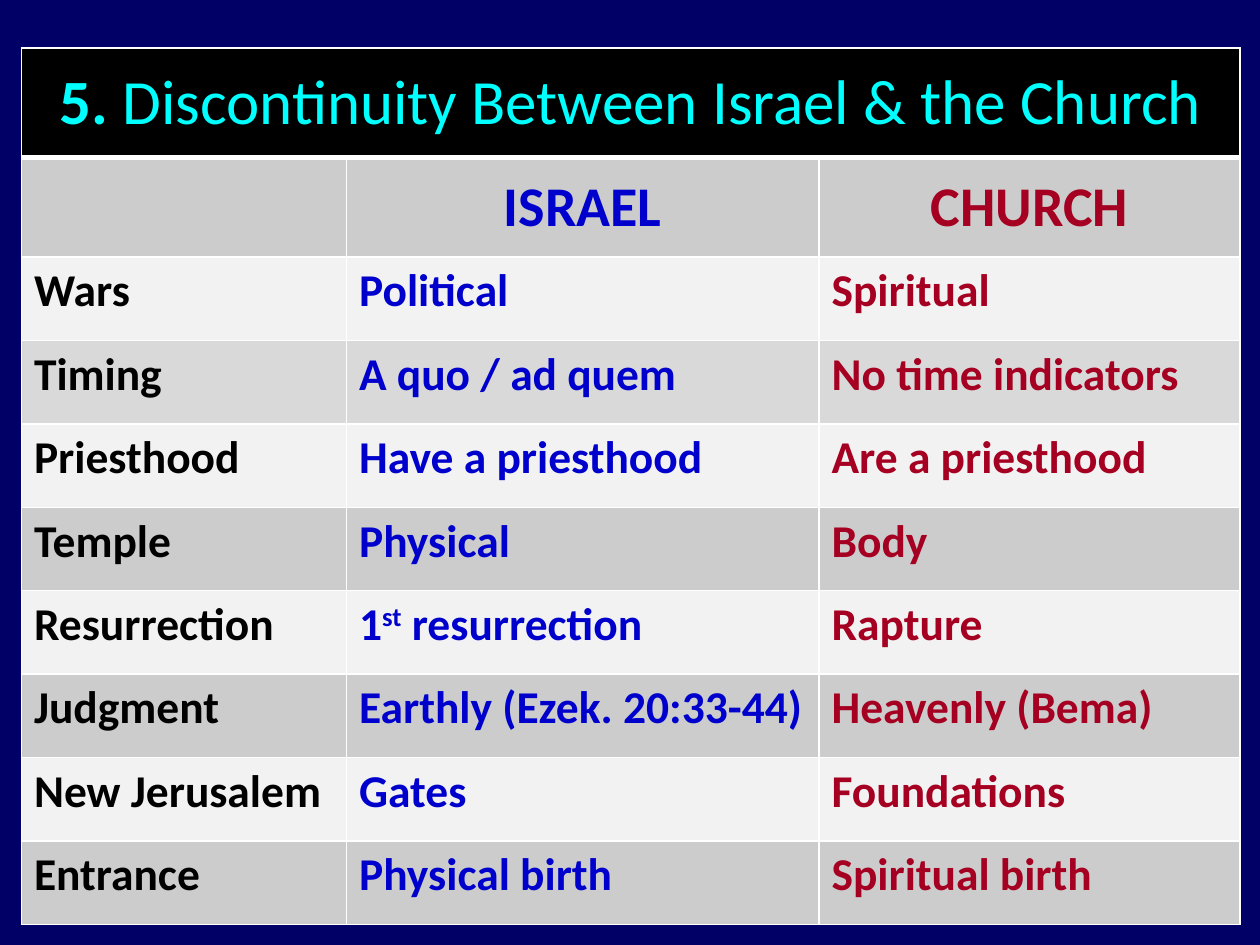
from dataclasses import dataclass
from typing import Optional

from lxml.etree import SubElement
from pptx import Presentation
from pptx.dml.color import RGBColor
from pptx.enum.text import MSO_ANCHOR, PP_ALIGN
from pptx.oxml.ns import qn
from pptx.table import _Cell
from pptx.util import Inches, Pt

NAVY = RGBColor(0x00, 0x00, 0x66)
BLACK = RGBColor(0x00, 0x00, 0x00)
CYAN = RGBColor(0x00, 0xFF, 0xFF)
BLUE = RGBColor(0x00, 0x00, 0xCC)
CRIMSON = RGBColor(0xA5, 0x00, 0x21)
WHITE = RGBColor(0xFF, 0xFF, 0xFF)
PALE = RGBColor(0xF2, 0xF2, 0xF2)
LIGHT = RGBColor(0xD9, 0xD9, 0xD9)
GRAY = RGBColor(0xCC, 0xCC, 0xCC)

LEFT, TOP, WIDTH, HEIGHT = 0.17, 0.38, 9.67, 6.96
TITLE_HEIGHT, HEADING_HEIGHT = 0.87, 0.79
TOPIC_WIDTH, ISRAEL_WIDTH = 2.58, 3.75
COLUMN_COLORS = (BLACK, BLUE, CRIMSON)


@dataclass(frozen=True)
class Span:
    text: str
    bold: bool = True
    raised: bool = False


@dataclass(frozen=True)
class Contrast:
    topic: str
    israel: str | tuple[Span, ...]
    church: str
    fill: RGBColor


CONTRASTS = (
    Contrast("Wars", "Political", "Spiritual", PALE),
    Contrast("Timing", "A quo / ad quem", "No time indicators", LIGHT),
    Contrast("Priesthood", "Have a priesthood", "Are a priesthood", PALE),
    Contrast("Temple", "Physical", "Body", GRAY),
    Contrast("Resurrection",
             (Span("1"), Span("st", raised=True), Span(" resurrection")),
             "Rapture", PALE),
    Contrast("Judgment", "Earthly (Ezek. 20:33-44)", "Heavenly (Bema)", GRAY),
    Contrast("New Jerusalem", "Gates", "Foundations", PALE),
    Contrast("Entrance", "Physical birth", "Spiritual birth", GRAY),
)


def write(cell: _Cell, content: str | tuple[Span, ...], *, size: float,
          color: RGBColor, before: float, after: float = 0,
          align: Optional[PP_ALIGN] = None,
          anchor: MSO_ANCHOR = MSO_ANCHOR.TOP) -> None:
    cell.vertical_anchor = anchor
    paragraph = cell.text_frame.paragraphs[0]
    paragraph.alignment = align
    paragraph.space_before, paragraph.space_after = Pt(before), Pt(after)
    spans = (Span(content),) if isinstance(content, str) else content
    for span in spans:
        run = paragraph.add_run()
        run.text = span.text
        run.font.name = "Calibri"
        run.font.size = Pt(size)
        run.font.bold = span.bold
        run.font.color.rgb = color
        if span.raised:
            run._r.get_or_add_rPr().set("baseline", "30000")


def paint(cell: _Cell, fill: RGBColor, *, above: float = 1,
          below: float = 1) -> None:
    properties = cell._tc.get_or_add_tcPr()
    for side, width in (("L", 1), ("R", 1), ("T", above), ("B", below)):
        border = SubElement(properties, qn(f"a:ln{side}"), w=str(Pt(width)))
        solid = SubElement(border, qn("a:solidFill"))
        SubElement(solid, qn("a:srgbClr"), val=str(WHITE))
    cell.fill.solid()
    cell.fill.fore_color.rgb = fill


def main() -> None:
    deck = Presentation()
    deck.slide_width, deck.slide_height = Inches(10), Inches(7.5)
    slide = deck.slides.add_slide(deck.slide_layouts[6])
    slide.background.fill.solid()
    slide.background.fill.fore_color.rgb = NAVY

    table = slide.shapes.add_table(
        len(CONTRASTS) + 2, len(COLUMN_COLORS),
        Inches(LEFT), Inches(TOP), Inches(WIDTH), Inches(HEIGHT)).table
    church_width = WIDTH - TOPIC_WIDTH - ISRAEL_WIDTH
    for column, width in zip(table.columns,
                             (TOPIC_WIDTH, ISRAEL_WIDTH, church_width)):
        column.width = Inches(width)
    contrast_height = (HEIGHT - TITLE_HEIGHT - HEADING_HEIGHT) / len(CONTRASTS)
    heights = [TITLE_HEIGHT, HEADING_HEIGHT] + [contrast_height] * len(CONTRASTS)
    for row, height in zip(table.rows, heights):
        row.height = Inches(height)

    title = table.cell(0, 0)
    title.merge(table.cell(0, 2))
    write(title, (Span("5. "),
                  Span("Discontinuity Between Israel & the Church", bold=False)),
          size=36, color=CYAN, before=7.2, align=PP_ALIGN.CENTER,
          anchor=MSO_ANCHOR.MIDDLE)
    for cell in table.rows[0].cells:
        paint(cell, BLACK, below=3)

    for cell, heading, color in zip(table.rows[1].cells,
                                    ("", "ISRAEL", "CHURCH"), COLUMN_COLORS):
        paint(cell, GRAY, above=3)
        if heading:
            write(cell, heading, size=32, color=color, before=6.4,
                  align=PP_ALIGN.CENTER, anchor=MSO_ANCHOR.MIDDLE)

    for index, contrast in enumerate(CONTRASTS, start=2):
        entries = (contrast.topic, contrast.israel, contrast.church)
        for cell, entry, color in zip(table.rows[index].cells, entries,
                                      COLUMN_COLORS):
            paint(cell, contrast.fill)
            write(cell, entry, size=26, color=color, before=6, after=6)

    deck.save("out.pptx")


if __name__ == "__main__":
    main()
